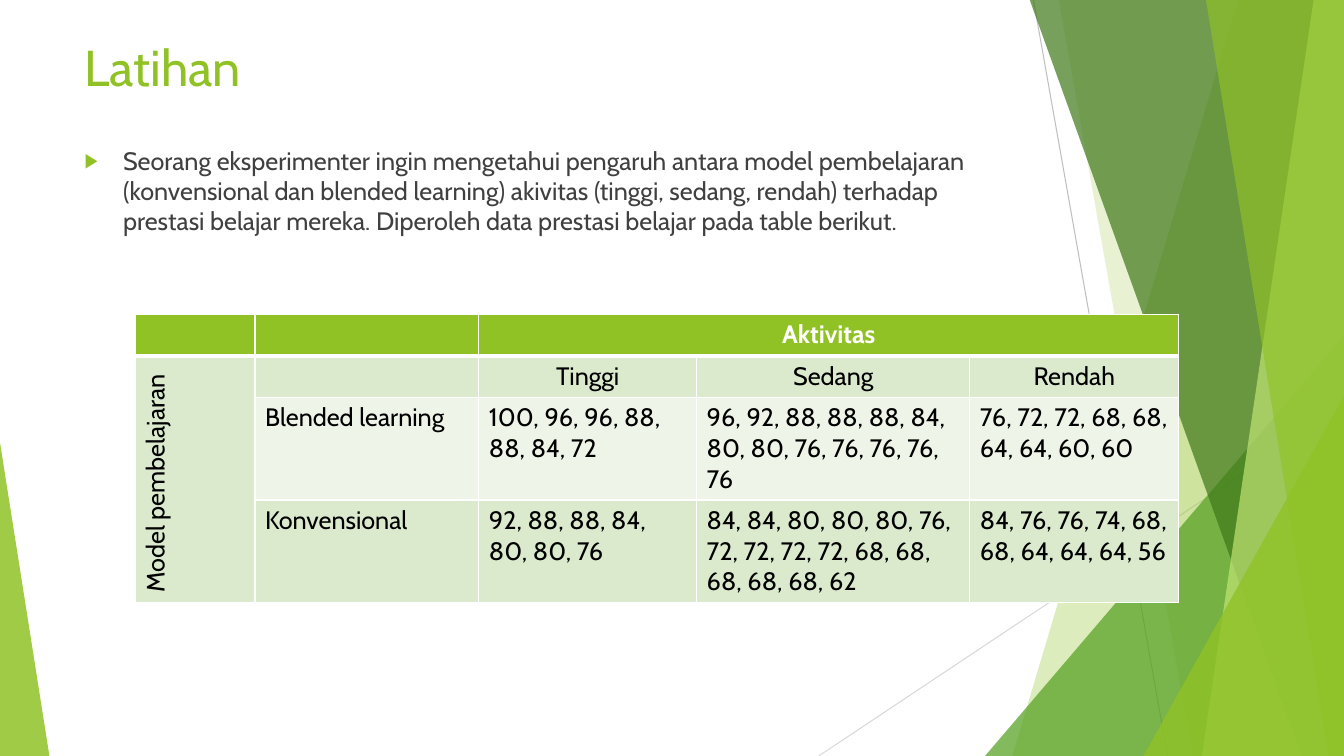
from dataclasses import dataclass

from lxml import etree
from pptx import Presentation
from pptx.dml.color import RGBColor
from pptx.enum import shapes, text
from pptx.oxml import ns
from pptx.util import Inches, Pt

FONT = "Cabin"
WHITE = RGBColor(0xFF, 0xFF, 0xFF)
BLACK = RGBColor(0, 0, 0)
BODY_GRAY = RGBColor(0x40, 0x40, 0x40)
LINE_DARK = RGBColor(0xBF, 0xBF, 0xBF)
LINE_LIGHT = RGBColor(0xD9, 0xD9, 0xD9)
LIME = RGBColor(0x90, 0xC2, 0x26)
GREEN = RGBColor(0x54, 0xA0, 0x21)
FOREST = RGBColor(0x3F, 0x78, 0x19)
PALE_LIME = RGBColor(0xC0, 0xE4, 0x74)
BAND_DARK = RGBColor(0xDB, 0xE9, 0xCD)
BAND_LIGHT = RGBColor(0xEE, 0xF4, 0xE8)

WIDTH, HEIGHT, TOP = 13.33, 7.5, -0.01


@dataclass(frozen=True)
class Ray:
    start: tuple[float, float]
    end: tuple[float, float]
    color: RGBColor


@dataclass(frozen=True)
class Facet:
    """A panel reaching the right edge, slanted from top_x to bottom_x."""
    top_x: float
    bottom_x: float
    color: RGBColor
    opacity: int


@dataclass(frozen=True)
class Corner:
    """A right triangle standing on the bottom edge."""
    left: float
    top: float
    width: float
    apex: float
    color: RGBColor
    opacity: int


RAYS = [
    Ray((10.25, 0), (11.58, HEIGHT), LINE_DARK),
    Ray((WIDTH, 4.03), (8.12, HEIGHT), LINE_LIGHT),
]
PANELS = [
    Facet(12.28, 10.04, LIME, 30),
    Facet(10.5, 11.83, LIME, 20),
    Corner(9.77, 3.33, 3.56, 1, GREEN, 72),
    Facet(10.21, 12.91, FOREST, 70),
    Facet(13.03, 11.92, PALE_LIME, 70),
    Facet(11.96, 13.18, LIME, 65),
    Corner(11.34, 3.93, 1.99, 1, LIME, 80),
    Corner(0, 4.39, 0.49, 0, LIME, 85),
]

BODY = (
    "Seorang eksperimenter ingin mengetahui pengaruh antara model pembelajaran "
    "(konvensional dan blended learning) akivitas (tinggi, sedang, rendah) terhadap "
    "prestasi belajar mereka. Diperoleh data prestasi belajar pada table berikut."
)
COLUMN_WIDTHS = [1.19, 2.22, 2.16, 2.71, 2.07]
ROW_HEIGHTS = [0.41, 0.41, 1.02, 1.02]
ROW_FILLS = [LIME, BAND_DARK, BAND_LIGHT, BAND_DARK]
ROWS = [
    ["", "", "Aktivitas", "", ""],
    ["Model pembelajaran", "", "Tinggi", "Sedang", "Rendah"],
    ["", "Blended learning", "100, 96, 96, 88, 88, 84, 72",
     "96, 92, 88, 88, 88, 84, 80, 80, 76, 76, 76, 76, 76",
     "76, 72, 72, 68, 68, 64, 64, 60, 60"],
    ["", "Konvensional", "92, 88, 88, 84, 80, 80, 76",
     "84, 84, 80, 80, 80, 76, 72, 72, 72, 72, 68, 68, 68, 68, 68, 62",
     "84, 76, 76, 74, 68, 68, 64, 64, 64, 56"],
]


def add_element(parent, tag: str, **attributes: str):
    element = etree.SubElement(parent, ns.qn(tag))
    for name, value in attributes.items():
        element.set(name, value)
    return element


def add_run(paragraph, content: str, size: int, color: RGBColor, bold: bool = False) -> None:
    run = paragraph.add_run()
    run.text = content
    run.font.name = FONT
    run.font.size = Pt(size)
    run.font.bold = bold
    run.font.color.rgb = color


def add_ray(slide, ray: Ray) -> None:
    points = [Inches(value) for value in ray.start + ray.end]
    connector = slide.shapes.add_connector(shapes.MSO_CONNECTOR.STRAIGHT, *points)
    connector.line.color.rgb = ray.color
    connector.line.width = Pt(0.75)
    add_element(connector._element.spPr, "a:effectLst")


def add_panel(slide, panel: Facet | Corner) -> None:
    if isinstance(panel, Facet):
        builder = slide.shapes.build_freeform(Inches(panel.top_x), Inches(TOP))
        outline = [(WIDTH, TOP), (WIDTH, HEIGHT), (panel.bottom_x, HEIGHT)]
        builder.add_line_segments([(Inches(x), Inches(y)) for x, y in outline], close=True)
        shape = builder.convert_to_shape()
    else:
        shape = slide.shapes.add_shape(
            shapes.MSO_SHAPE.ISOSCELES_TRIANGLE, Inches(panel.left), Inches(panel.top),
            Inches(panel.width), Inches(HEIGHT - panel.top))
        shape.adjustments[0] = panel.apex
    shape.shadow.inherit = False
    shape.line.fill.background()
    shape.fill.solid()
    shape.fill.fore_color.rgb = panel.color
    color = shape._element.spPr.find(ns.qn("a:solidFill"))[0]
    add_element(color, "a:alpha", val=str(panel.opacity * 1000))


def place_text(slide, shape, top: float, height: float):
    """Move a placeholder in front of the panels and return its first paragraph."""
    slide.shapes._spTree.append(shape._element)
    shape.left, shape.top = Inches(0.74), Inches(top)
    shape.width, shape.height = Inches(9.4), Inches(height)
    frame = shape.text_frame
    frame.word_wrap = True
    frame.auto_size = text.MSO_AUTO_SIZE.NONE
    frame.vertical_anchor = text.MSO_ANCHOR.TOP
    paragraph = frame.paragraphs[0]
    paragraph.alignment = text.PP_ALIGN.LEFT
    return paragraph


def add_bullet(paragraph) -> None:
    paragraph.space_before = Pt(10)
    properties = paragraph._p.get_or_add_pPr()
    properties.set("marL", str(Inches(0.38)))
    properties.set("indent", str(-Inches(0.38)))
    add_element(add_element(properties, "a:buClr"), "a:srgbClr", val=str(LIME))
    add_element(properties, "a:buSzPct", val="80000")
    add_element(properties, "a:buChar", char="▶")


def style_cell(cell, row: int) -> None:
    properties = cell._tc.get_or_add_tcPr()
    heavy_side = {0: "a:lnB", 1: "a:lnT"}.get(row)
    for side in ("a:lnL", "a:lnR", "a:lnT", "a:lnB"):
        width = Pt(3 if side == heavy_side else 1)
        border = add_element(properties, side, w=str(width))
        add_element(add_element(border, "a:solidFill"), "a:srgbClr", val=str(WHITE))
    cell.fill.solid()
    cell.fill.fore_color.rgb = ROW_FILLS[row]


def add_score_table(slide) -> None:
    frame = slide.shapes.add_table(
        len(ROWS), len(COLUMN_WIDTHS), Inches(1.34), Inches(3.12),
        Inches(sum(COLUMN_WIDTHS)), Inches(sum(ROW_HEIGHTS)))
    table = frame.table
    table.first_row = table.horz_banding = False
    for column, width in zip(table.columns, COLUMN_WIDTHS):
        column.width = Inches(width)
    for row, values in enumerate(ROWS):
        table.rows[row].height = Inches(ROW_HEIGHTS[row])
        for column, value in enumerate(values):
            cell = table.cell(row, column)
            style_cell(cell, row)
            paragraph = cell.text_frame.paragraphs[0]
            if row < 2 and column > 1:
                paragraph.alignment = text.PP_ALIGN.CENTER
            if value:
                add_run(paragraph, value, 18, BLACK if row else WHITE, bold=row == 0)
    # Merged heading and rotated side label
    table.cell(0, 2).merge(table.cell(0, 4))
    side_label = table.cell(1, 0)
    side_label.merge(table.cell(3, 0))
    side_label.vertical_anchor = text.MSO_ANCHOR.BOTTOM
    side_label._tc.get_or_add_tcPr().set("vert", "vert270")


def main() -> None:
    presentation = Presentation()
    presentation.slide_width, presentation.slide_height = Inches(WIDTH), Inches(HEIGHT)
    slide = presentation.slides.add_slide(presentation.slide_layouts[1])

    # Background decoration
    for ray in RAYS:
        add_ray(slide, ray)
    for panel in PANELS:
        add_panel(slide, panel)

    # Title and task
    title, body = slide.shapes.title, slide.placeholders[1]
    add_run(place_text(slide, title, 0.31, 1.44), "Latihan", 36, LIME)
    paragraph = place_text(slide, body, 1.39, 4.24)
    add_bullet(paragraph)
    add_run(paragraph, BODY, 18, BODY_GRAY)

    # Scores by learning model and activity
    add_score_table(slide)
    presentation.save("out.pptx")


if __name__ == "__main__":
    main()
